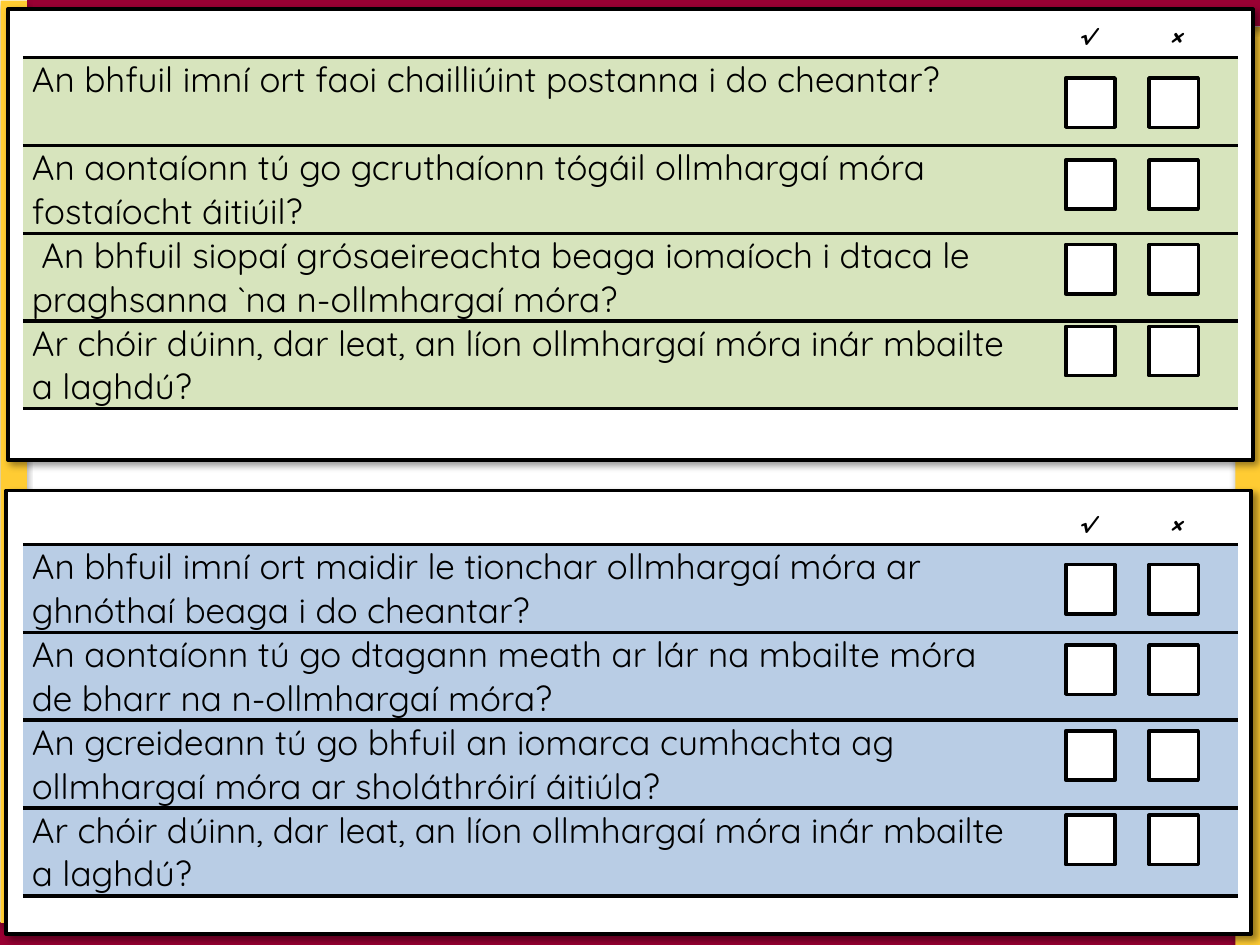
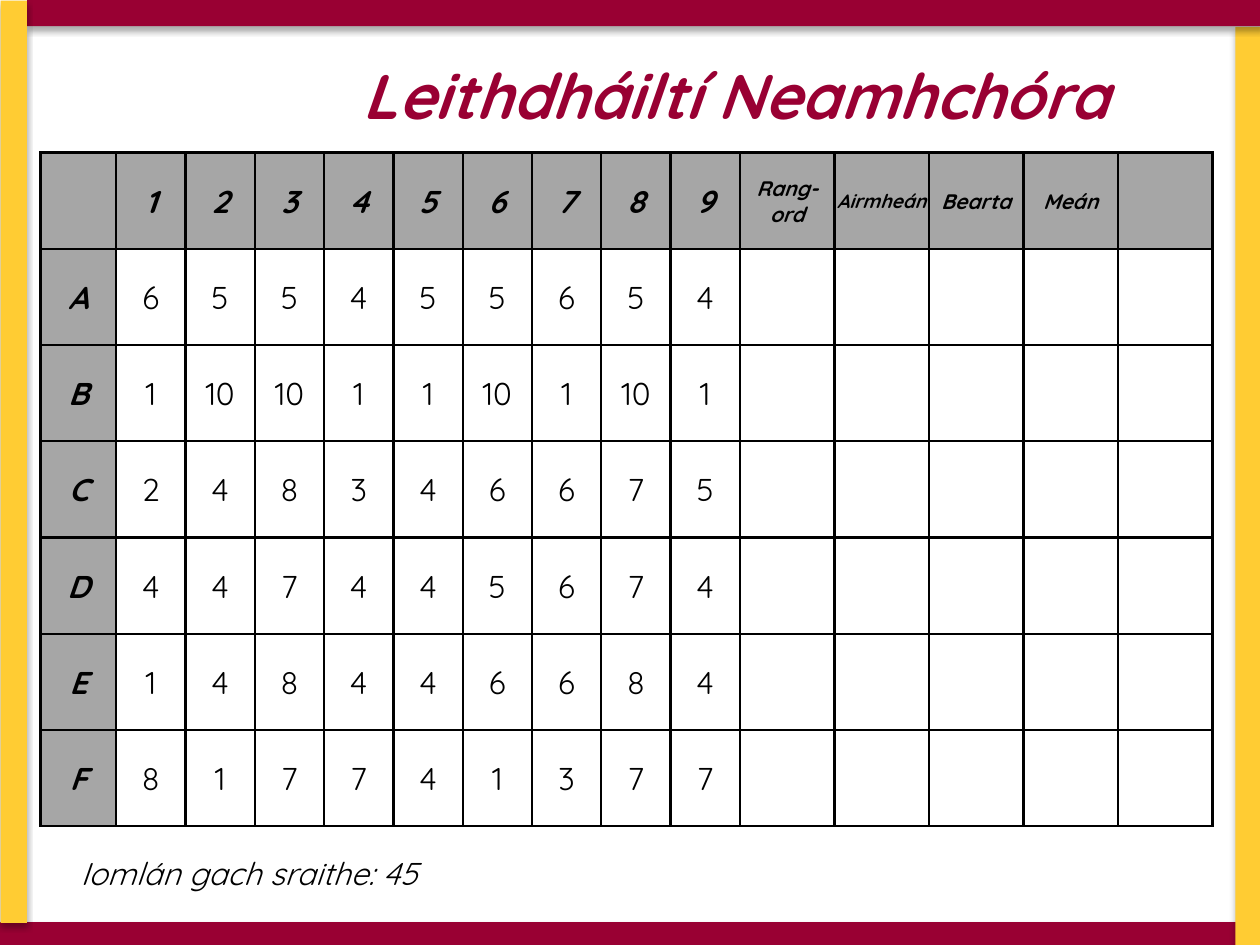
from dataclasses import dataclass
from typing import Optional

from lxml import etree
from pptx import Presentation
from pptx.dml.color import RGBColor
from pptx.enum.shapes import MSO_SHAPE
from pptx.enum.text import MSO_ANCHOR, MSO_AUTO_SIZE, PP_ALIGN
from pptx.oxml.ns import qn
from pptx.util import Pt

RECTANGLE = MSO_SHAPE.RECTANGLE
TOP, MIDDLE = MSO_ANCHOR.TOP, MSO_ANCHOR.MIDDLE
LEFT, CENTER = PP_ALIGN.LEFT, PP_ALIGN.CENTER
NO_AUTOFIT = MSO_AUTO_SIZE.NONE

FONT = "Quicksand"
BLACK = RGBColor(0x00, 0x00, 0x00)
WHITE = RGBColor(0xFF, 0xFF, 0xFF)
MAROON = RGBColor(0x99, 0x00, 0x33)
GOLD = RGBColor(0xFF, 0xCC, 0x33)
GREEN = RGBColor(0xD7, 0xE4, 0xBD)
BLUE = RGBColor(0xB9, 0xCD, 0xE5)
GREY = RGBColor(0xA6, 0xA6, 0xA6)

TITLE_ONLY, BLANK = 5, 6
FIRST_MASTER_SHAPE_ID = 101
BOX_LEFTS = (609, 656.6)
BOX_SIZE = 28.2
QUESTION_ROW = 50.15


@dataclass(frozen=True)
class Frame:
    left: float
    top: float
    width: float
    height: float

    def lengths(self) -> tuple:
        return Pt(self.left), Pt(self.top), Pt(self.width), Pt(self.height)


@dataclass(frozen=True)
class Shadow:
    opacity: int
    blur: float
    distance: float
    angle: int


@dataclass(frozen=True)
class Band:
    frame: Frame
    color: RGBColor


@dataclass(frozen=True)
class Survey:
    frame: Frame
    marks_top: float
    table_top: float
    box_tops: tuple
    color: RGBColor
    questions: tuple


BAND_SHADOW = Shadow(32, 3.5, 2.2, 90)
PANEL_SHADOW = Shadow(40, 4, 3, 45)

BANDS = (
    Band(Frame(0, 527, 720, 15), MAROON),
    Band(Frame(706, 15.4, 15, 527), GOLD),
    Band(Frame(15.6, 0, 705.6, 15), MAROON),
    Band(Frame(0.4, 0.4, 15, 527), GOLD),
)

CLOSING_QUESTION = "Ar chóir dúinn, dar leat, an líon ollmhargaí móra inár mbailte a laghdú?"
SURVEYS = (
    Survey(
        Frame(3.5, 280.3, 711.4, 253.4), 287.3, 311.1, (322.6, 368.6, 417.6, 465.8), BLUE,
        (
            "An bhfuil imní ort maidir le tionchar ollmhargaí móra ar ghnóthaí beaga i do cheantar?",
            "An aontaíonn tú go dtagann meath ar lár na mbailte móra de bharr na n-ollmhargaí móra?",
            "An gcreideann tú go bhfuil an iomarca cumhachta ag ollmhargaí móra ar sholáthróirí áitiúla?",
            CLOSING_QUESTION,
        ),
    ),
    Survey(
        Frame(4.5, 5.2, 711.4, 257.8), 8.6, 33, (44.6, 91.4, 139.7, 186.5), GREEN,
        (
            "An bhfuil imní ort faoi chailliúint postanna i do cheantar?",
            "An aontaíonn tú go gcruthaíonn tógáil ollmhargaí móra fostaíocht áitiúil?",
            " An bhfuil siopaí grósaeireachta beaga iomaíoch i dtaca le praghsanna `na n-ollmhargaí móra?",
            CLOSING_QUESTION,
        ),
    ),
)

SUMMARY_HEADINGS = {"Rang-ord": 12, "Airmheán": 11, "Bearta": 12, "Meán": 12}
ALLOCATIONS = {
    "A": (6, 5, 5, 4, 5, 5, 6, 5, 4),
    "B": (1, 10, 10, 1, 1, 10, 1, 10, 1),
    "C": (2, 4, 8, 3, 4, 6, 6, 7, 5),
    "D": (4, 4, 7, 4, 4, 5, 6, 7, 4),
    "E": (1, 4, 8, 4, 4, 6, 6, 8, 4),
    "F": (8, 1, 7, 7, 4, 1, 3, 7, 7),
}


def write(text_frame, text: str, *, size: float, color: RGBColor = BLACK, bold: bool = False,
          italic: bool = False, align=LEFT) -> None:
    paragraph = text_frame.paragraphs[0]
    paragraph.alignment = align
    run = paragraph.add_run()
    run.text = text
    font = run.font
    font.name, font.size = FONT, Pt(size)
    font.bold, font.italic = bold, italic
    font.color.rgb = color


def add_color(parent, color: RGBColor):
    fill = etree.SubElement(parent, qn("a:solidFill"))
    return etree.SubElement(fill, qn("a:srgbClr"), val=str(color))


def add_rectangle(slide, frame: Frame, color: RGBColor, line_width: float = 0,
                  shadow: Optional[Shadow] = None):
    shape = slide.shapes.add_shape(RECTANGLE, *frame.lengths())
    shape.shadow.inherit = False
    shape.fill.solid()
    shape.fill.fore_color.rgb = color
    if line_width:
        shape.line.color.rgb = BLACK
        shape.line.width = Pt(line_width)
    else:
        shape.line.fill.background()
    if shadow:
        effects = shape.element.spPr.find(qn("a:effectLst"))
        outer = etree.SubElement(
            effects, qn("a:outerShdw"), blurRad=str(Pt(shadow.blur)), dist=str(Pt(shadow.distance)),
            dir=str(shadow.angle * 60000), algn="ctr", rotWithShape="0")
        shade = etree.SubElement(outer, qn("a:srgbClr"), val=str(BLACK))
        etree.SubElement(shade, qn("a:alpha"), val=str(shadow.opacity * 1000))
    return shape


def add_label(slide, frame: Frame, text: str, **text_format) -> None:
    text_frame = slide.shapes.add_textbox(*frame.lengths()).text_frame
    text_frame.word_wrap = True
    write(text_frame, text, **text_format)


def add_plain_table(slide, left: float, top: float, column_widths: list, row_heights: list):
    frame = Frame(left, top, sum(column_widths), sum(row_heights))
    table = slide.shapes.add_table(len(row_heights), len(column_widths), *frame.lengths()).table
    table.first_row = table.horz_banding = False
    for column, width in zip(table.columns, column_widths):
        column.width = Pt(width)
    for row, height in zip(table.rows, row_heights):
        row.height = Pt(height)
    return table


def style_cell(cell, fill: Optional[RGBColor], line_width: float, lined_sides: str,
               margins: tuple, anchor) -> None:
    cell.margin_left, cell.margin_top, cell.margin_right, cell.margin_bottom = map(Pt, margins)
    cell.vertical_anchor = anchor
    properties = cell._tc.get_or_add_tcPr()
    for side in "LRTB":
        line = etree.SubElement(properties, qn(f"a:ln{side}"), w=str(Pt(line_width)))
        if side in lined_sides:
            add_color(line, BLACK)
        else:
            etree.SubElement(line, qn("a:noFill"))
    if fill is None:
        cell.fill.background()
    else:
        cell.fill.solid()
        cell.fill.fore_color.rgb = fill


def add_master_bands(presentation, slide) -> None:
    """Draw the bands on the slide, then move them behind everything on the master."""
    master_tree = presentation.slide_master.shapes.element
    for index, band in enumerate(BANDS):
        element = add_rectangle(slide, band.frame, band.color, shadow=BAND_SHADOW).element
        element.nvSpPr.cNvPr.id = FIRST_MASTER_SHAPE_ID + index
        master_tree.insert(2 + index, element)


def add_survey(slide, survey: Survey) -> None:
    add_rectangle(slide, survey.frame, WHITE, 2, PANEL_SHADOW)
    table = add_plain_table(slide, 13, survey.table_top, [578.5, 116.2],
                            [QUESTION_ROW] * len(survey.questions))
    for row, question in zip(table.rows, survey.questions):
        for cell in row.cells:
            style_cell(cell, survey.color, 2.25, "TB", (5.2, 0, 5.2, 0), TOP)
        write(row.cells[0].text_frame, question, size=20)
    for top in survey.box_tops:
        for left in BOX_LEFTS:
            add_rectangle(slide, Frame(left, top, BOX_SIZE, BOX_SIZE), WHITE, 2)
    for mark, left in zip("√×", (599, 650.2)):
        add_label(slide, Frame(left, survey.marks_top, 43.2, 24.2), mark, size=14,
                  bold=True, italic=True, align=CENTER)


def add_allocations(slide) -> None:
    headings = ["", *map(str, range(1, 10)), *SUMMARY_HEADINGS, ""]
    rows = [headings] + [[name, *values] for name, values in ALLOCATIONS.items()]
    widths = [43.2] + [39.6] * 9 + [54] * 5
    table = add_plain_table(slide, 23.2, 87.2, widths, [55] * len(rows))
    for row_index, texts in enumerate(rows):
        for column_index in range(len(widths)):
            cell = table.cell(row_index, column_index)
            is_heading = row_index == 0 or column_index == 0
            style_cell(cell, GREY if is_heading else None, 1.5, "LRTB", (0.7, 0.7, 0.7, 0), MIDDLE)
            text = str(texts[column_index]) if column_index < len(texts) else ""
            if text:
                write(cell.text_frame, text, size=SUMMARY_HEADINGS.get(text, 18),
                      bold=is_heading, italic=is_heading, align=CENTER)


def set_title(slide, frame: Frame, text: str) -> None:
    title = slide.shapes.title
    title.left, title.top, title.width, title.height = frame.lengths()
    text_frame = title.text_frame
    text_frame.word_wrap = False
    text_frame.auto_size = NO_AUTOFIT
    text_frame.vertical_anchor = TOP
    write(text_frame, text, size=36, color=MAROON, bold=True, italic=True)


def main() -> None:
    presentation = Presentation()
    presentation.slide_width, presentation.slide_height = Pt(720), Pt(540)

    survey_slide = presentation.slides.add_slide(presentation.slide_layouts[BLANK])
    add_master_bands(presentation, survey_slide)
    for survey in SURVEYS:
        add_survey(survey_slide, survey)

    allocation_slide = presentation.slides.add_slide(presentation.slide_layouts[TITLE_ONLY])
    set_title(allocation_slide, Frame(200.2, 28.8, 446.4, 51), "Leithdháiltí Neamhchóra")
    add_allocations(allocation_slide)
    add_label(allocation_slide, Frame(39, 484.6, 232.6, 29), "Iomlán gach sraithe: 45",
              size=18, italic=True)
    presentation.save("out.pptx")


if __name__ == "__main__":
    main()
